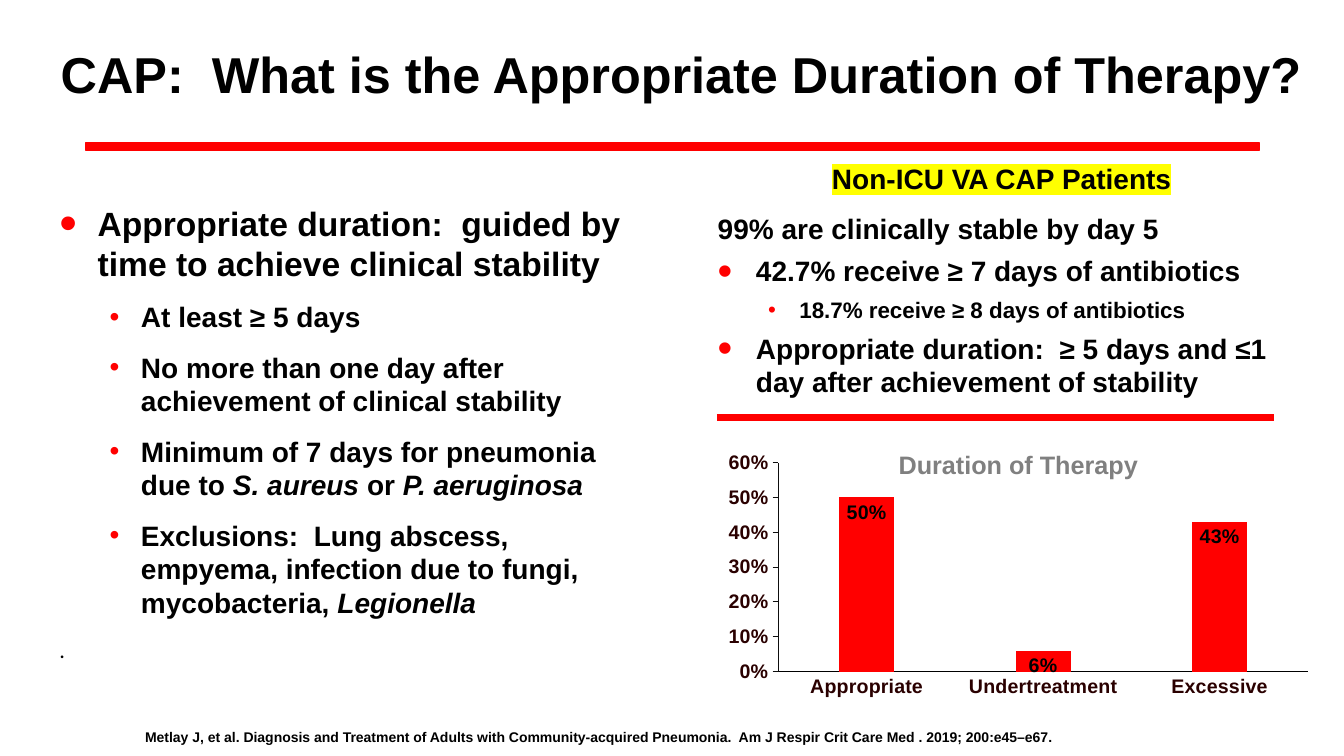
from lxml.etree import SubElement
from pptx import Presentation
from pptx.chart.data import CategoryChartData
from pptx.dml.color import RGBColor
from pptx.enum.chart import XL_CHART_TYPE, XL_LABEL_POSITION, XL_TICK_MARK
from pptx.enum.shapes import MSO_CONNECTOR, MSO_SHAPE
from pptx.enum.text import MSO_ANCHOR, PP_ALIGN
from pptx.oxml import parse_xml
from pptx.oxml.ns import nsdecls, qn
from pptx.util import Pt

PX = 9144  # 100 px to the inch
COLORS = {"text": "000000", "accent": "FF0000", "highlight": "FFFF00",
          "axis_text": "2A0000", "value_line": "0D0D0D", "chart_title": "808080"}
# Bullet level: left margin, hanging indent, bullet size in percent
BULLETS = {0: (38, -38, 150), 1: (81, -31, 100)}


def color(name):
    return RGBColor.from_string(COLORS[name])


class SlideBuilder:
    def __init__(self, presentation):
        self.slide = presentation.slides.add_slide(presentation.slide_layouts[6])

    def style_font(self, font, color_name="text", **values):
        for name, value in {"name": "Arial", "bold": True, **values}.items():
            setattr(font, name, value)
        font.color.rgb = color(color_name)

    def bar(self, *box):
        shape = self.slide.shapes.add_shape(MSO_SHAPE.RECTANGLE, *(v * PX for v in box))
        shape.shadow.inherit = False
        shape.fill.solid()
        shape.fill.fore_color.rgb = color("accent")
        shape.line.color.rgb = color("accent")
        shape.line.width = Pt(1)

    def line(self, *ends):
        connector = self.slide.shapes.add_connector(
            MSO_CONNECTOR.STRAIGHT, *(v * PX for v in ends))
        connector.line.color.rgb = color("accent")
        connector.line.width = Pt(5)
        SubElement(connector._element.spPr, qn("a:effectLst"))

    def text(self, box, paragraphs, anchor=MSO_ANCHOR.TOP):
        frame = self.slide.shapes.add_textbox(*(v * PX for v in box)).text_frame
        frame.word_wrap = True
        frame.vertical_anchor = anchor
        for index, values in enumerate(paragraphs):
            paragraph = frame.add_paragraph() if index else frame.paragraphs[0]
            self.fill_paragraph(paragraph, **values)

    def fill_paragraph(self, paragraph, text, size, level=None, italics=(),
                       highlight=False, font=None, **formats):
        for name, value in formats.items():
            setattr(paragraph, name, value)
        if level is not None:
            self.bullet(paragraph, level)
        for part in [text] if isinstance(text, str) else text:
            run = paragraph.add_run()
            run.text = part
            self.style_font(run.font, size=Pt(size), italic=part in italics, **(font or {}))
            if highlight:
                fill = run.font._element.find(qn("a:solidFill"))
                fill.addnext(parse_xml(
                    f'<a:highlight {nsdecls("a")}>'
                    f'<a:srgbClr val="{COLORS["highlight"]}"/></a:highlight>'))

    def bullet(self, paragraph, level):
        margin, indent, size = BULLETS[level]
        paragraph.level = level
        properties = paragraph._p.get_or_add_pPr()
        properties.set("marL", str(margin * PX))
        properties.set("indent", str(indent * PX))
        bullet_color = SubElement(properties, qn("a:buClr"))
        SubElement(bullet_color, qn("a:srgbClr"), val=COLORS["accent"])
        SubElement(properties, qn("a:buSzPct"), val=str(size * 1000))
        SubElement(properties, qn("a:buFont"), typeface="Arial")
        SubElement(properties, qn("a:buChar"), char="•")

    def column_chart(self, box, title, values, plot_area):
        data = CategoryChartData(number_format="0%")
        data.categories = list(values)
        data.add_series("Series 1", list(values.values()))
        chart = self.slide.shapes.add_chart(
            XL_CHART_TYPE.COLUMN_CLUSTERED, *(v * PX for v in box), data).chart
        chart.has_legend = False
        self.style_font(chart.font, size=Pt(10), bold=False)

        # Title lies over the plot area
        chart.has_title = True
        paragraph = chart.chart_title.text_frame.paragraphs[0]
        run = paragraph.add_run()
        run.text = title
        self.style_font(run.font, "chart_title", size=Pt(18))
        chart.chart_title.include_in_layout = True

        # Columns and their labels
        plot = chart.plots[0]
        plot.gap_width, plot.overlap, plot.vary_by_categories = 219, -27, False
        series = plot.series[0]
        series.format.fill.solid()
        series.format.fill.fore_color.rgb = color("accent")
        labels = series.data_labels
        for name, value in {"show_value": True, "number_format": "0%",
                            "number_format_is_linked": False,
                            "position": XL_LABEL_POSITION.INSIDE_END}.items():
            setattr(labels, name, value)
        self.style_font(labels.font, size=Pt(14))

        # Axes
        for axis, tick, line_color in (
                (chart.category_axis, XL_TICK_MARK.NONE, "text"),
                (chart.value_axis, XL_TICK_MARK.OUTSIDE, "value_line")):
            axis.has_major_gridlines = False
            axis.major_tick_mark = tick
            axis.minor_tick_mark = XL_TICK_MARK.NONE
            axis.format.line.color.rgb = color(line_color)
            axis.format.line.width = Pt(0.75)
            self.style_font(axis.tick_labels.font, "axis_text", size=Pt(14))
        for name, value in {"minimum_scale": 0, "maximum_scale": 0.6, "major_unit": 0.1}.items():
            setattr(chart.value_axis, name, value)
        chart.value_axis.tick_labels.number_format = "0%"
        chart.value_axis.tick_labels.number_format_is_linked = False

        # Fixed inner plot area
        area = chart._chartSpace.chart.plotArea
        for old in area.findall(qn("c:layout")):
            area.remove(old)
        settings = {"layoutTarget": "inner", "xMode": "edge", "yMode": "edge",
                    **dict(zip("xywh", plot_area))}
        entries = "".join(f'<c:{k} val="{v}"/>' for k, v in settings.items())
        area.insert(0, parse_xml(f'<c:layout {nsdecls("c")}><c:manualLayout>{entries}'
                                 '</c:manualLayout></c:layout>'))


def main():
    presentation = Presentation()
    presentation.slide_width, presentation.slide_height = 1333 * PX, 750 * PX
    builder = SlideBuilder(presentation)

    # Heading
    builder.bar(85, 142, 1164, 7)
    builder.text((43, 12, 1266, 122), [
        {"text": "CAP:  What is the Appropriate Duration of Therapy?", "size": 36,
         "alignment": PP_ALIGN.CENTER}], MSO_ANCHOR.MIDDLE)

    # Guideline recommendations
    after = {"space_after": Pt(12)}
    point = {"size": 20, "level": 1, **after}
    builder.text((49, 196, 583, 484), [
        {"text": "Appropriate duration:  guided by time to achieve clinical stability",
         "size": 24, "level": 0, **after},
        {"text": "At least ≥ 5 days", **point},
        {"text": "No more than one day after achievement of clinical stability", **point},
        {"text": ["Minimum of 7 days for pneumonia due to ", "S. aureus ", "or ",
                  "P. aeruginosa"], "italics": ("S. aureus ", "P. aeruginosa"), **point},
        {"text": ["Exclusions:  Lung abscess, empyema, infection due to fungi, mycobacteria, ",
                  "Legionella"], "italics": ("Legionella",), **point},
        {"text": ".", "size": 16, "font": {"name": "Calibri", "bold": False},
         "space_after": Pt(6)}])

    # Citation
    builder.text((134, 718, 1065, 27), [
        {"text": "Metlay J, et al. Diagnosis and Treatment of Adults with Community-acquired "
                 "Pneumonia.  Am J Respir Crit Care Med . 2019; 200:e45–e67.", "size": 10}])

    # Patient findings
    finding = {"size": 20, "space_after": Pt(6)}
    builder.text((702, 152, 583, 254), [
        {"text": "Non-ICU VA CAP Patients", "size": 20, "highlight": True,
         "alignment": PP_ALIGN.CENTER, "line_spacing": 1.1, **after},
        {"text": "99% are clinically stable by day 5", **finding},
        {"text": "42.7% receive ≥ 7 days of antibiotics", "level": 0, **finding},
        {"text": "18.7% receive ≥ 8 days of antibiotics", "level": 1, **finding, "size": 16},
        {"text": "Appropriate duration:  ≥ 5 days and ≤1 day after achievement of stability",
         "level": 0, **finding}])
    builder.line(711, 414, 1264, 414)

    # Duration chart
    builder.column_chart((705, 429, 610, 282), "Duration of Therapy",
                         {"Appropriate": 0.5, "Undertreatment": 0.06, "Excessive": 0.43},
                         (0.11, 0.106, 0.861, 0.736))
    presentation.save("out.pptx")


if __name__ == "__main__":
    main()
